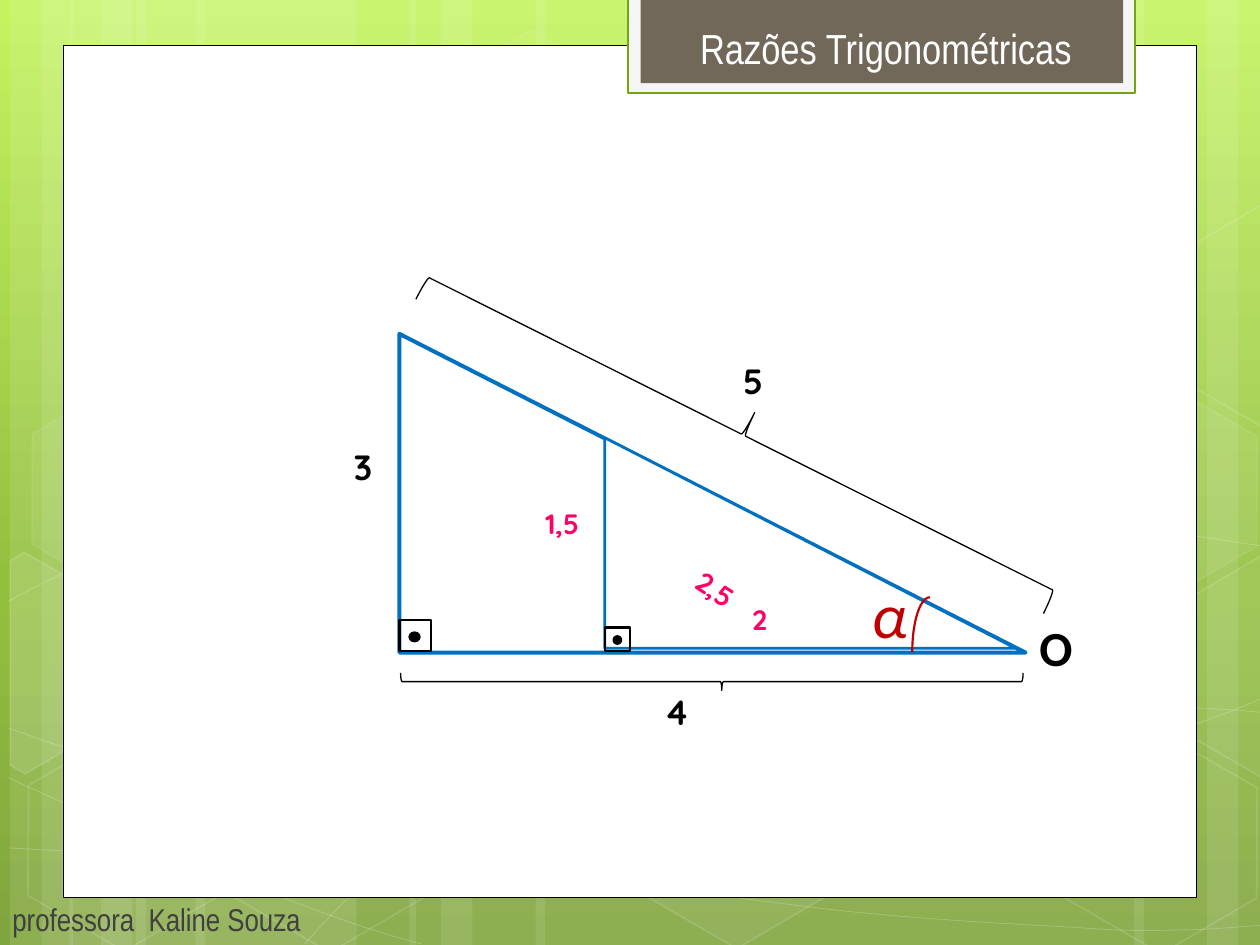
"""Builds the slide on trigonometric ratios with two similar right triangles."""
from math import cos, radians, sin

from lxml.etree import SubElement
from pptx import Presentation
from pptx.dml.color import RGBColor
from pptx.enum.shapes import MSO_SHAPE as SHAPE
from pptx.enum.text import MSO_ANCHOR as ANCHOR, PP_ALIGN as ALIGN
from pptx.oxml import parse_xml
from pptx.oxml.ns import nsdecls, qn
from pptx.util import Inches, Pt

COLUMNS, ROWS = 100, 75
WIDTH, HEIGHT = Inches(10), Inches(7.5)
WHITE, BLACK, BLUE, RED, PINK = "FFFFFF", "000000", "0070C0", "C00000", "FF0066"
TILT = 30

BANDS = [(10.8, 17.5), (0.8, 5), (3.3, 8.3), (15.5, 17.5), (5.5, 5), (8, 8.3),
         (73.3, 17.5), (95.8, 5), (90, 8.3), (42.5, 30.8), (32.5, 5), (35, 8.3)]
WAVES = [
    [(0.7, 67.3), (6.1, 67.6), (11.5, 67.9), (19, 67.8), (26.5, 67.7),
     (35.8, 67.5), (45.8, 66.5), (55.8, 65.5), (70, 63.6), (79.2, 61.7),
     (88.3, 59.8), (97.7, 56.8), (100.7, 55.1)],
    [(0.7, 47.7), (3.6, 46.1), (6.5, 44.6), (12.1, 43.1), (17.8, 41.6),
     (25.9, 39.4), (34.7, 38.7), (43.6, 38), (54.4, 37.9), (65.4, 38.7),
     (76.4, 39.5), (94.7, 42.6), (100.7, 43.4)],
    [(0.6, 61.7), (12.7, 67.2), (24.7, 72.7), (33.4, 74.9)],
    [(0.7, 57.8), (3.8, 58.9), (7, 60), (12.8, 61.6), (18.6, 63.1),
     (27.3, 65.6), (35.7, 67.3), (44, 69), (54.5, 70.8), (62.8, 71.8),
     (71.1, 72.9), (80, 73.3), (85.3, 73.6), (90.5, 74), (91.9, 73.8),
     (94.5, 73.8), (97.1, 73.7), (98.9, 73.5), (100.7, 73.4)],
    [(24.2, 74.9), (26, 72.9), (27.8, 70.9), (30.2, 69.1), (32.6, 67.3),
     (36, 65.3), (38.8, 63.9), (41.6, 62.5), (43.3, 61.9), (47, 60.9),
     (50.6, 59.9), (57.3, 58.5), (60.8, 57.8), (64.4, 57.1), (64.9, 57.1),
     (68, 56.9), (71.1, 56.6), (76, 56.3), (79.4, 56.2), (82.9, 56.1),
     (88.6, 56.2), (88.6, 56.2), (90.8, 56.2), (93.1, 56.2), (95.3, 56.2),
     (97.1, 56.3), (98.8, 56.4), (99.7, 56.5), (100.6, 56.6), (100.3, 56.5),
     (100.6, 56.6)],
]
HEXAGONS = [(33.4, 3.6, 4, 8), (49.7, 58.9, 6, 12), (1.1, 59.1, 0, 12),
            (1.4, 31.2, 7, 8), (17.4, 59.2, 0, 12), (75.3, 45.3, 10, 12),
            (83.4, 59.3, 0, 12), (83.4, 31.4, 7, 8)]
LEFT_EDGE = [(0.8, 44.5), (1.9, 43.8), (9.6, 48.2), (9.5, 57), (2, 61.4), (0.8, 60.7)]
RIGHT_EDGE = [(92.6, 48.5), (100.1, 44.1), (100.9, 44.6), (100.9, 61.3),
              (100.2, 61.7), (92.6, 57.3)]
EDGE_RISE = 27.85


def x(columns):
    """Turn grid columns into a length."""
    return round(WIDTH * columns / COLUMNS)


def y(rows):
    """Turn grid rows into a length."""
    return round(HEIGHT * rows / ROWS)


def paint(fill, color, alpha=100):
    """Fill with a hex colour at an opacity in percent, or leave empty."""
    if not color or not alpha:
        fill.background()
        return
    fill.solid()
    fill.fore_color.rgb = RGBColor.from_string(color)
    if alpha < 100:
        srgb = fill._xPr.find(".//" + qn("a:srgbClr"))
        srgb.append(parse_xml(f'<a:alpha {nsdecls("a")} val="{alpha * 1000}"/>'))


def style(sp, fill=None, line=None, weight=1, alpha=100, line_alpha=100):
    """Give a shape its fill and outline, without a shadow."""
    sp.shadow.inherit = False
    paint(sp.fill, fill, alpha)
    paint(sp.line.fill, line, line_alpha)
    if line:
        sp.line.width = Pt(weight)
    return sp


def add_shape(s, kind, box, adjust=(), rotation=0, flip=False, **look):
    """Add a preset shape on the grid."""
    left, top, width, height = box
    sp = s.shapes.add_shape(kind, x(left), y(top), x(width), y(height))
    for i, value in enumerate(adjust):
        sp.adjustments[i] = value
    sp.rotation = rotation
    if flip:
        sp._element.spPr.find(qn("a:xfrm")).set("flipH", "1")
    return style(sp, **look)


def add_outline(s, points, close=True, **look):
    """Add a freeform through grid points."""
    corners = [(x(col), y(row)) for col, row in points]
    builder = s.shapes.build_freeform(*corners[0])
    builder.add_line_segments(corners[1:], close=close)
    return style(builder.convert_to_shape(), **look)


def add_curve(s, knots, **look):
    """Add an open chain of cubic Bézier curves."""
    sp = add_outline(s, knots, close=False, **look)
    outline = sp._element.find(".//" + qn("a:path"))
    segments = outline.findall(qn("a:lnTo"))
    for i in range(0, len(segments), 3):
        curve = SubElement(outline, qn("a:cubicBezTo"))
        for segment in segments[i:i + 3]:
            curve.append(segment[0])
            outline.remove(segment)


def add_tilted_outline(s, points, center, **look):
    """Add a freeform whose frame is tilted about its centre."""
    cx, cy = center
    c, n = cos(radians(TILT)), sin(radians(TILT))
    level = [(cx + (col - cx) * c + (row - cy) * n, cy - (col - cx) * n + (row - cy) * c)
             for col, row in points]
    add_outline(s, level, **look).rotation = TILT


def add_text(s, text, box, size, color, font="Quicksand", bold=False, italic=False,
             align=ALIGN.LEFT, anchor=ANCHOR.TOP, rotation=0):
    """Add a one-paragraph text box."""
    left, top, width, height = box
    sp = s.shapes.add_textbox(x(left), y(top), x(width), y(height))
    sp.rotation = rotation
    tf = sp.text_frame
    tf.word_wrap = True
    tf.vertical_anchor = anchor
    p = tf.paragraphs[0]
    p.text = text
    p.alignment = align
    p.font.name, p.font.size = font, Pt(size)
    p.font.bold, p.font.italic = bold, italic
    p.font.color.rgb = RGBColor.from_string(color)


def add_right_angle(s, square, dot):
    """Mark a right angle with a dot inside a square."""
    add_shape(s, SHAPE.OVAL, dot, fill=BLACK, line=BLACK, weight=1.25)
    add_shape(s, SHAPE.RECTANGLE, square, line=BLACK, weight=1.25)


def add_background(s):
    """Set the green gradient with its bands, waves and hexagons."""
    s.background.fill.gradient()
    grad = s._element.find(".//" + qn("a:gradFill"))
    stops = "".join(f'<a:gs pos="{pos * 1000}"><a:srgbClr val="{color}"/></a:gs>'
                    for pos, color in ((0, "C3F35F"), (62, "93BF3F"), (100, "81A53E")))
    grad.getparent().replace(grad, parse_xml(
        f'<a:gradFill {nsdecls("a")} rotWithShape="1"><a:gsLst>{stops}</a:gsLst>'
        '<a:lin ang="5400000" scaled="0"/></a:gradFill>'))
    for left, width in BANDS:
        add_shape(s, SHAPE.RECTANGLE, (left, 0, width, ROWS), fill=WHITE, alpha=10)
    for knots in WAVES:
        add_curve(s, knots, line=WHITE, weight=0.5, line_alpha=20)
    for left, top, alpha, line_alpha in HEXAGONS:
        add_shape(s, SHAPE.HEXAGON, (left, top, 17.5, 15.2), (0.285, 1.155), TILT,
                  fill=WHITE, alpha=alpha, line=WHITE, line_alpha=line_alpha)
    upper_right = [(col, row - EDGE_RISE) for col, row in RIGHT_EDGE]
    for points, center, alpha in ((LEFT_EDGE, (3.6, 53.5), 10), (RIGHT_EDGE, (98.5, 52), 4),
                                  (upper_right, (98.5, 52 - EDGE_RISE), 0)):
        add_tilted_outline(s, points, center, fill=WHITE, alpha=alpha, line=WHITE, line_alpha=12)


def add_frame(s):
    """Add the white panel and the title plate."""
    add_shape(s, SHAPE.RECTANGLE, (5, 3.6, 90, 67.65), fill=WHITE, line=BLACK, weight=0.5)
    add_shape(s, SHAPE.RECTANGLE, (49.85, -0.2, 40.25, 7.6), fill="F5F5F5", line="74A510", weight=1.25)
    add_shape(s, SHAPE.RECTANGLE, (50.85, -0.2, 38.3, 6.8), fill="71685A")


def add_triangles(s):
    """Draw both triangles with their angle marks."""
    for box, weight in (((31.7, 26.5, 49.7, 25.3), 2.25), ((48, 34.75, 32.6, 16.7), 1.5)):
        add_shape(s, SHAPE.RIGHT_TRIANGLE, box, fill=WHITE, line=BLUE, weight=weight)
    add_right_angle(s, (31.7, 49.2, 2.5, 2.5), (32.5, 50.2, 0.8, 0.7))
    add_right_angle(s, (48, 49.8, 2, 1.9), (48.7, 50.5, 0.6, 0.6))
    add_shape(s, SHAPE.ARC, (72.4, 47.4, 2.8, 8.7), flip=True, line=RED, weight=1.25)


def add_labels(s):
    """Write the title, the footer, the angle and the side lengths."""
    add_text(s, "O", (81.5, 48.5, 5.4, 5.7), 28, BLACK, "Calibri", bold=True)
    add_text(s, "α", (68.2, 45.2, 6.2, 7.1), 36, RED, "Calibri", italic=True)
    add_text(s, "Razões Trigonométricas", (49.7, 0, 41.2, 6.3), 24, WHITE, "Arial Narrow",
             align=ALIGN.CENTER, anchor=ANCHOR.BOTTOM)
    add_text(s, "professora  Kaline Souza", (0, 70.95, COLUMNS, 4), 18, "404040", "Arial Narrow")
    for text, left, top, width, turn in (("2,5", 54, 45.7, 7.9, 33.4), ("2", 58.7, 47.3, 3.8, 0),
                                         ("1,5", 42.3, 39.7, 7.7, 0)):
        add_text(s, text, (left, top, width, 3.7), 16, PINK, bold=True, rotation=turn)
    for text, left, top in (("5", 58, 28.05), ("4", 51.75, 54.3), ("3", 27.1, 34.9)):
        add_text(s, text, (left, top, 3.8, 4.4), 20, BLACK, bold=True)


def add_braces(s):
    """Span the hypotenuse and the base with braces."""
    add_shape(s, SHAPE.LEFT_BRACE, (56.8, 6.6, 4, 55.7), (0.048, 0.504), 296.6, flip=True,
              line=BLACK, weight=0.75)
    add_shape(s, SHAPE.LEFT_BRACE, (55.8, 29.4, 1.4, 49.4), (0.083, 0.516), 270,
              line=BLACK, weight=0.75)


def main():
    """Build and save the slide."""
    prs = Presentation()
    prs.slide_width, prs.slide_height = WIDTH, HEIGHT
    s = prs.slides.add_slide(prs.slide_layouts[6])
    for add_part in (add_background, add_frame, add_triangles, add_labels, add_braces):
        add_part(s)
    prs.save("out.pptx")


if __name__ == "__main__":
    main()
